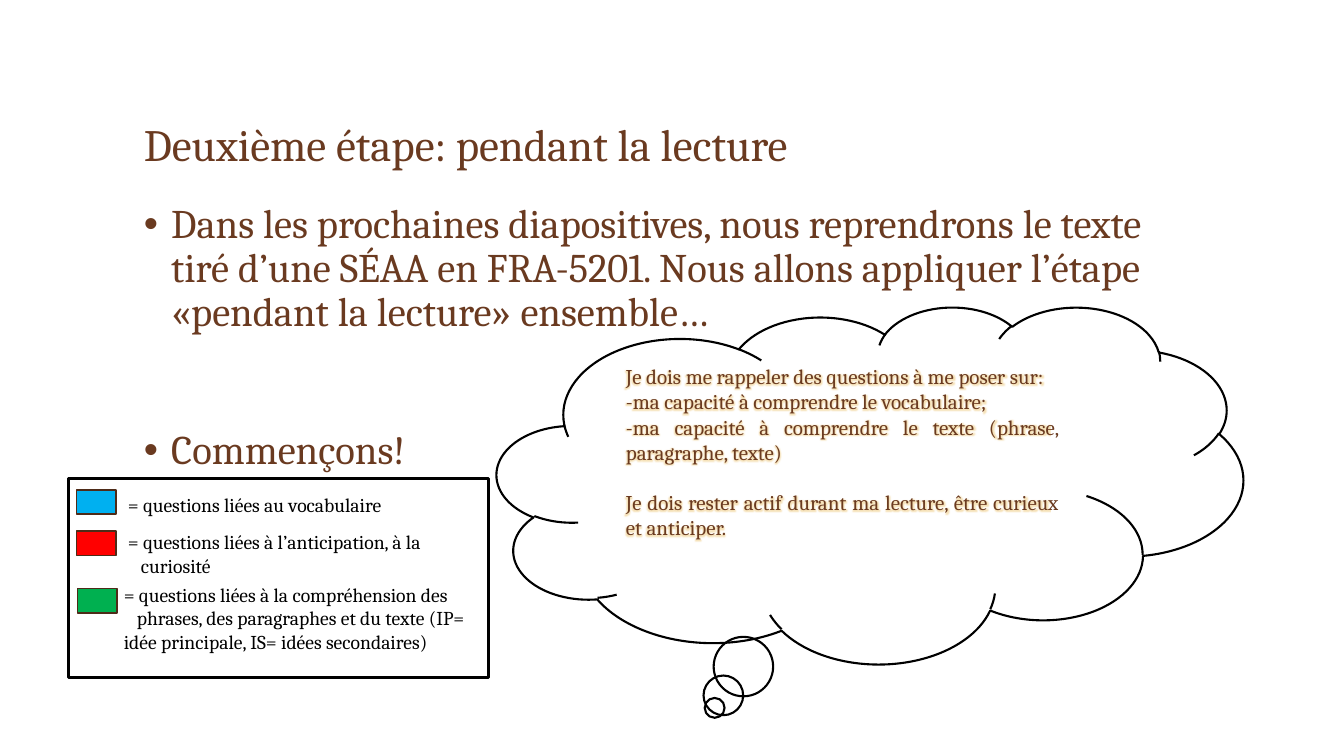
from lxml import etree
from pptx import Presentation
from pptx.dml.color import RGBColor
from pptx.enum.shapes import MSO_SHAPE
from pptx.enum.text import MSO_ANCHOR, PP_ALIGN
from pptx.oxml.ns import qn
from pptx.util import Inches, Pt

COLORS = {"brown": "6A3A20", "black": "000000", "edge": "4E2B18", "glow": "E8B54D",
          "blue": "00B0F0", "red": "FF0000", "green": "00B050"}
FONT = "Cambria"

TITLE = "Deuxième étape: pendant la lecture"
BODY = [
    ("Dans les prochaines diapositives, nous reprendrons le texte tiré d’une SÉAA en FRA-5201. "
     "Nous allons appliquer l’étape «pendant la lecture» ensemble…", 0),
    ("Commençons!", 67.4),
]
REMINDERS = [
    ("Je dois me rappeler des questions à me poser sur:", 0),
    ("-ma capacité à comprendre le vocabulaire;", 0),
    ("-ma capacité à comprendre le texte (phrase, paragraphe, texte)", 0),
    ("Je dois rester actif durant ma lecture, être curieux et anticiper.", 18),
]
LEGEND = [
    ("blue", (0.76, 4.86), (1.17, 4.84, 3.6, 0.34), ["= questions liées au vocabulaire"]),
    ("red", (0.76, 5.27), (1.17, 5.21, 3.6, 0.57),
     ["= questions liées à l’anticipation, à la", "curiosité"]),
    ("green", (0.77, 5.84), (1.13, 5.73, 3.8, 0.81),
     ["= questions liées à la compréhension des",
      "phrases, des paragraphes et du texte (IP= idée principale, IS= idées secondaires)"]),
]

prs = Presentation()
prs.slide_width, prs.slide_height = Inches(13.33), Inches(7.5)
s = prs.slides.add_slide(prs.slide_layouts[6])


def rgb(name):
    return RGBColor.from_string(COLORS[name])


def add_shape(kind, box, line, width, fill=None):
    sp = s.shapes.add_shape(kind, *map(Inches, box))
    sp.shadow.inherit = False
    if fill:
        sp.fill.solid()
        sp.fill.fore_color.rgb = rgb(fill)
    else:
        sp.fill.background()
    sp.line.color.rgb = rgb(line)
    sp.line.width = Pt(width)


def add_text(box, paras, size, color, anchor=MSO_ANCHOR.TOP):
    tf = s.shapes.add_textbox(*map(Inches, box)).text_frame
    tf.word_wrap = True
    tf.vertical_anchor = anchor
    for i, (text, before) in enumerate(paras):
        p = tf.paragraphs[0] if i == 0 else tf.add_paragraph()
        p.space_before = Pt(before)
        r = p.add_run()
        r.text = text
        r.font.name = FONT
        r.font.size = Pt(size)
        r.font.color.rgb = rgb(color)
    return tf.paragraphs


def indent(p, left, first):
    pPr = p._p.get_or_add_pPr()
    pPr.set("marL", str(Inches(left)))
    pPr.set("indent", str(Inches(first)))
    return pPr


def add_bullet(p):
    pPr = indent(p, 0.27, -0.27)
    clr = etree.SubElement(pPr, qn("a:buClr"))
    etree.SubElement(clr, qn("a:srgbClr"), val=COLORS["brown"])
    etree.SubElement(pPr, qn("a:buFont"), typeface="Arial")
    etree.SubElement(pPr, qn("a:buChar"), char="•")


def add_glow(r):
    effects = etree.Element(qn("a:effectLst"))
    glow = etree.SubElement(effects, qn("a:glow"), rad=str(Pt(5)))
    clr = etree.SubElement(glow, qn("a:srgbClr"), val=COLORS["glow"])
    etree.SubElement(clr, qn("a:alpha"), val="40000")
    r._r.rPr.find(qn("a:solidFill")).addnext(effects)


add_text((1.33, 0.47, 10.66, 1.28), [(TITLE, 0)], 32, "brown", MSO_ANCHOR.BOTTOM)[0].line_spacing = 0.9

for p in add_text((1.33, 1.97, 10.66, 4.85), BODY, 29, "brown"):
    p.line_spacing = 0.9
    add_bullet(p)

add_shape(MSO_SHAPE.CLOUD_CALLOUT, (4.93, 3.04, 7.4, 3.54), "black", 1.5)
for p in add_text((6.11, 3.56, 4.49, 2.52), REMINDERS, 15, "brown"):
    p.alignment = PP_ALIGN.JUSTIFY
    add_glow(p.runs[0])

add_shape(MSO_SHAPE.RECTANGLE, (0.68, 4.75, 4.17, 1.97), "black", 2.25)
for color, (x, y), box, lines in LEGEND:
    add_shape(MSO_SHAPE.RECTANGLE, (x, y, 0.39, 0.24), "edge", 1, color)
    for p in add_text(box, [(line, 0) for line in lines], 14, "black")[1:]:
        indent(p, 0, 0.13)

prs.save("out.pptx")
